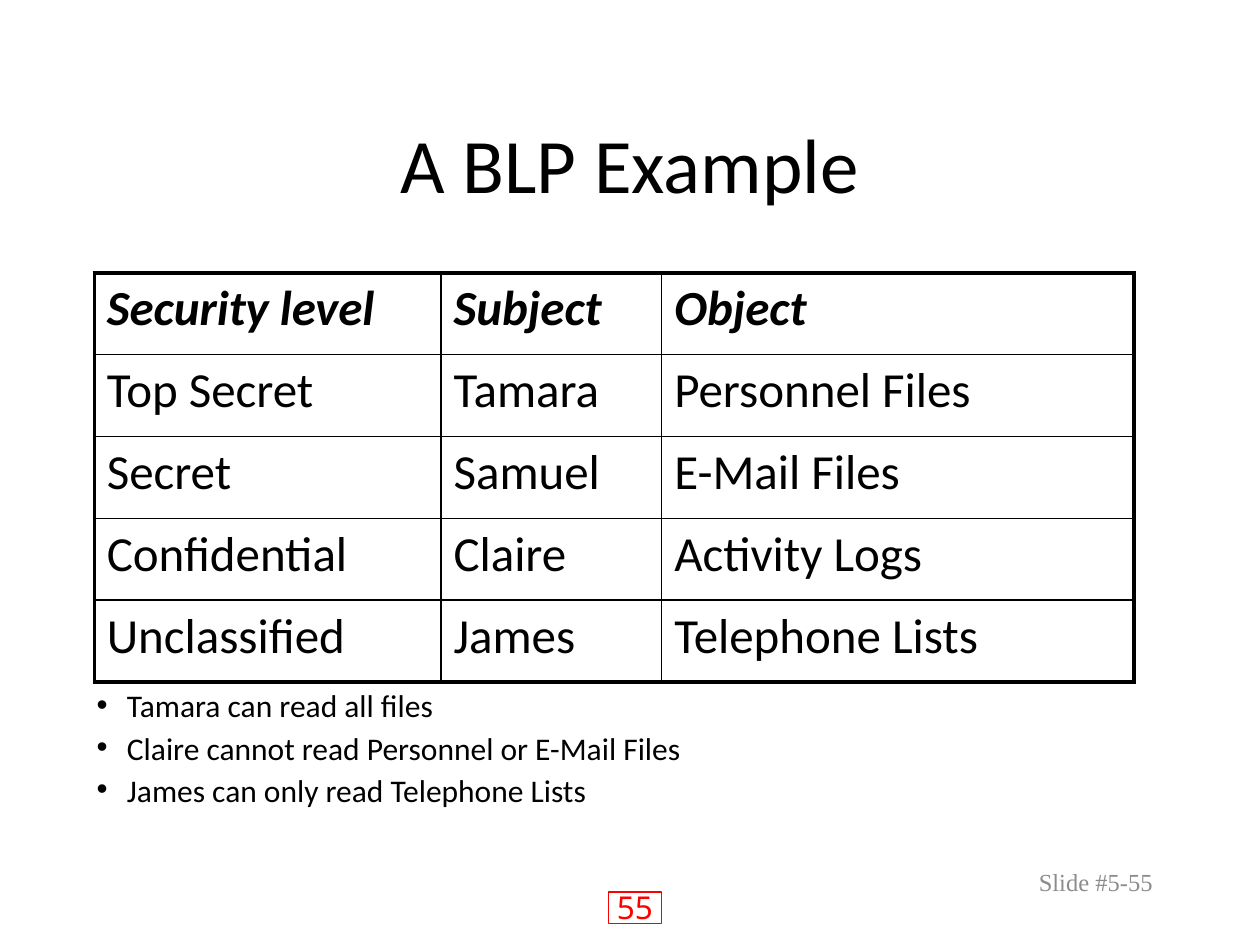
from dataclasses import dataclass

from lxml.etree import SubElement
from pptx import Presentation
from pptx.dml.color import RGBColor
from pptx.enum.shapes import MSO_SHAPE
from pptx.enum.text import MSO_ANCHOR, MSO_AUTO_SIZE, PP_ALIGN
from pptx.oxml.ns import qn
from pptx.slide import Slide
from pptx.table import _Cell
from pptx.text.text import TextFrame, _Paragraph
from pptx.util import Cm, Pt

BLACK = RGBColor(0x00, 0x00, 0x00)
RED = RGBColor(0xFF, 0x00, 0x00)
GRAY = RGBColor(0x8C, 0x8C, 0x8C)

OUTER_BORDER = Pt(2.25)
INNER_BORDER = Pt(1)
BULLET_INDENT = Cm(0.61)

COLUMN_WIDTHS = (Cm(6.99), Cm(4.45), Cm(9.52))
ROW_HEIGHT = Cm(1.65)
ROWS = (
    ("Security level", "Subject", "Object"),
    ("Top Secret", "Tamara", "Personnel Files"),
    ("Secret", "Samuel", "E-Mail Files"),
    ("Confidential", "Claire", "Activity Logs"),
    ("Unclassified", "James", "Telephone Lists"),
)
ACCESS_RULES = (
    "Tamara can read all files",
    "Claire cannot read Personnel or E-Mail Files",
    "James can only read Telephone Lists",
)


@dataclass(frozen=True)
class TextStyle:
    size: float
    font: str = "Calibri"
    color: RGBColor = BLACK
    emphasis: bool = False


@dataclass(frozen=True)
class Label:
    text: str
    left: float
    top: float
    width: float
    height: float
    style: TextStyle
    align: PP_ALIGN
    anchor: MSO_ANCHOR = MSO_ANCHOR.TOP


LABELS = (
    Label("55", 11.63, 17.78, 2.34, 1.02,
          TextStyle(18, "Noto Sans", RED), PP_ALIGN.CENTER),
    Label("A BLP Example", 1.9, 1.7, 21.6, 3.18,
          TextStyle(44), PP_ALIGN.CENTER, MSO_ANCHOR.MIDDLE),
    Label("Slide #5-55", 18.21, 17.35, 5.28, 1.27,
          TextStyle(14, "Times New Roman", GRAY), PP_ALIGN.RIGHT),
)


def add_run(para: _Paragraph, text: str, style: TextStyle) -> None:
    run = para.add_run()
    run.text = text
    run.font.size = Pt(style.size)
    run.font.name = style.font
    run.font.color.rgb = style.color
    run.font.bold = run.font.italic = style.emphasis


def add_text_frame(page: Slide, left: float, top: float, width: float, height: float) -> TextFrame:
    box = page.shapes.add_textbox(Cm(left), Cm(top), Cm(width), Cm(height))
    frame = box.text_frame
    frame.word_wrap = True
    frame.auto_size = MSO_AUTO_SIZE.NONE
    return frame


def add_label(page: Slide, label: Label) -> None:
    frame = add_text_frame(page, label.left, label.top, label.width, label.height)
    frame.vertical_anchor = label.anchor
    para = frame.paragraphs[0]
    para.alignment = label.align
    add_run(para, label.text, label.style)


def add_number_frame(page: Slide) -> None:
    frame = page.shapes.add_shape(MSO_SHAPE.RECTANGLE, Cm(12.27), Cm(17.98), Cm(1.07), Cm(0.64))
    frame.shadow.inherit = False
    frame.fill.background()
    frame.line.color.rgb = RED
    frame.line.width = Pt(0.75)


def set_borders(cell: _Cell, row: int, column: int) -> None:
    """Draw thick lines on the table's outer edges and thin ones inside."""
    outer_edges = {
        "a:lnL": column == 0,
        "a:lnR": column == len(COLUMN_WIDTHS) - 1,
        "a:lnT": row == 0,
        "a:lnB": row == len(ROWS) - 1,
    }
    properties = cell._tc.get_or_add_tcPr()
    for position, (tag, outer) in enumerate(outer_edges.items()):
        line = SubElement(properties, qn(tag), w=str(OUTER_BORDER if outer else INNER_BORDER))
        fill = SubElement(line, qn("a:solidFill"))
        SubElement(fill, qn("a:srgbClr"), val=str(BLACK))
        properties.insert(position, line)


def add_security_table(page: Slide) -> None:
    table = page.shapes.add_table(
        len(ROWS), len(COLUMN_WIDTHS), Cm(1.9), Cm(5.5),
        sum(COLUMN_WIDTHS), ROW_HEIGHT * len(ROWS),
    ).table
    table.horz_banding = False
    for column, width in zip(table.columns, COLUMN_WIDTHS):
        column.width = width
    for row, texts in enumerate(ROWS):
        table.rows[row].height = ROW_HEIGHT
        for column, text in enumerate(texts):
            cell = table.cell(row, column)
            cell.fill.background()
            set_borders(cell, row, column)
            para = cell.text_frame.paragraphs[0]
            para.space_before = Pt(5.6)
            add_run(para, text, TextStyle(28, emphasis=row == 0))


def add_access_rules(page: Slide) -> None:
    frame = add_text_frame(page, 1.7, 13.92, 20.9, 2.67)
    for index, rule in enumerate(ACCESS_RULES):
        para = frame.add_paragraph() if index else frame.paragraphs[0]
        para.line_spacing = 0.7
        para.space_before = Pt(9)
        properties = para._p.get_or_add_pPr()
        properties.set("marL", str(BULLET_INDENT))
        properties.set("indent", str(-BULLET_INDENT))
        SubElement(properties, qn("a:buFont"), typeface="Arial")
        SubElement(properties, qn("a:buChar"), char="•")
        add_run(para, rule, TextStyle(18))


def main() -> None:
    deck = Presentation()
    deck.slide_width, deck.slide_height = Cm(25.4), Cm(19.05)
    page = deck.slides.add_slide(deck.slide_layouts[6])
    add_number_frame(page)
    for label in LABELS:
        add_label(page, label)
    add_security_table(page)
    add_access_rules(page)
    deck.save("out.pptx")


if __name__ == "__main__":
    main()
